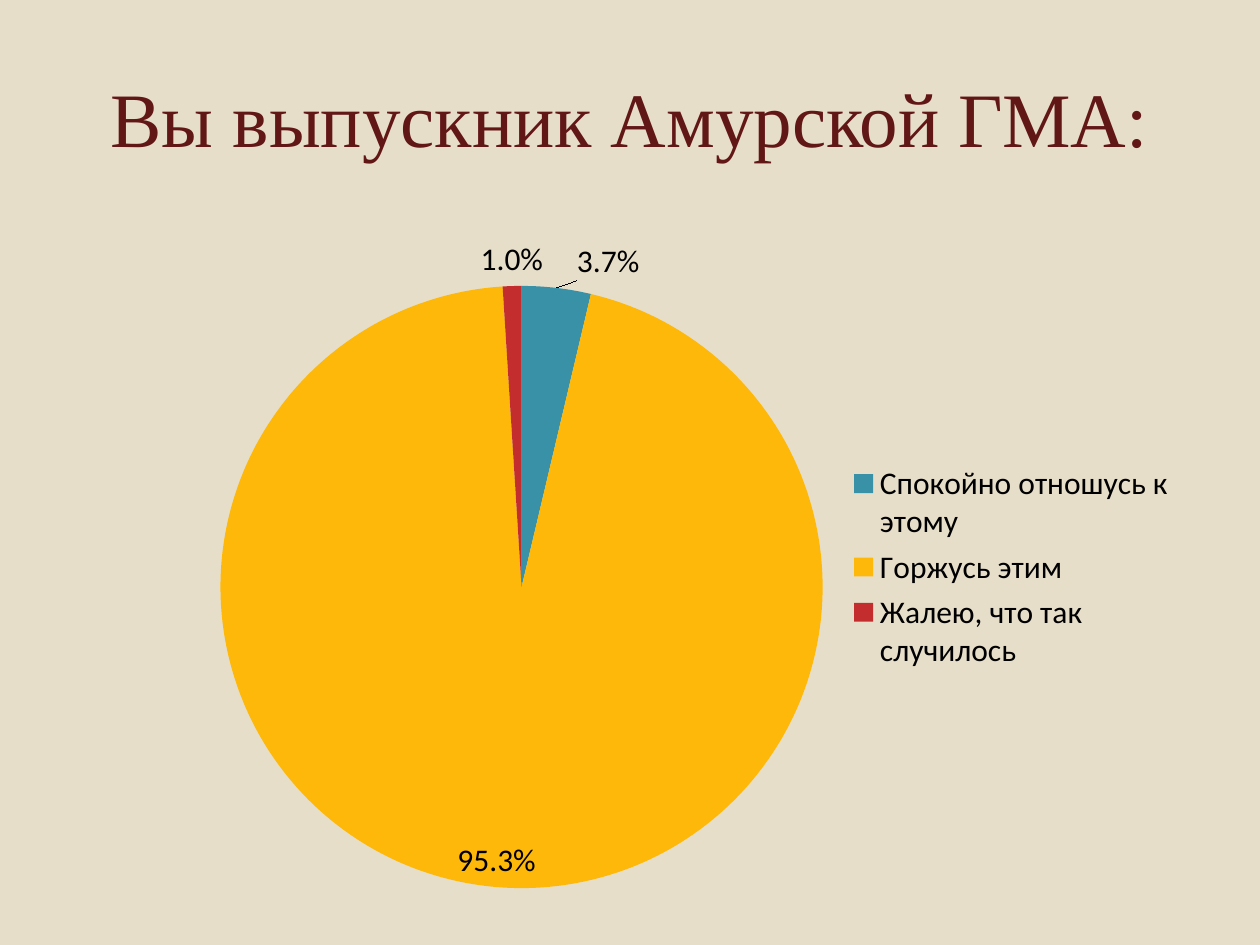
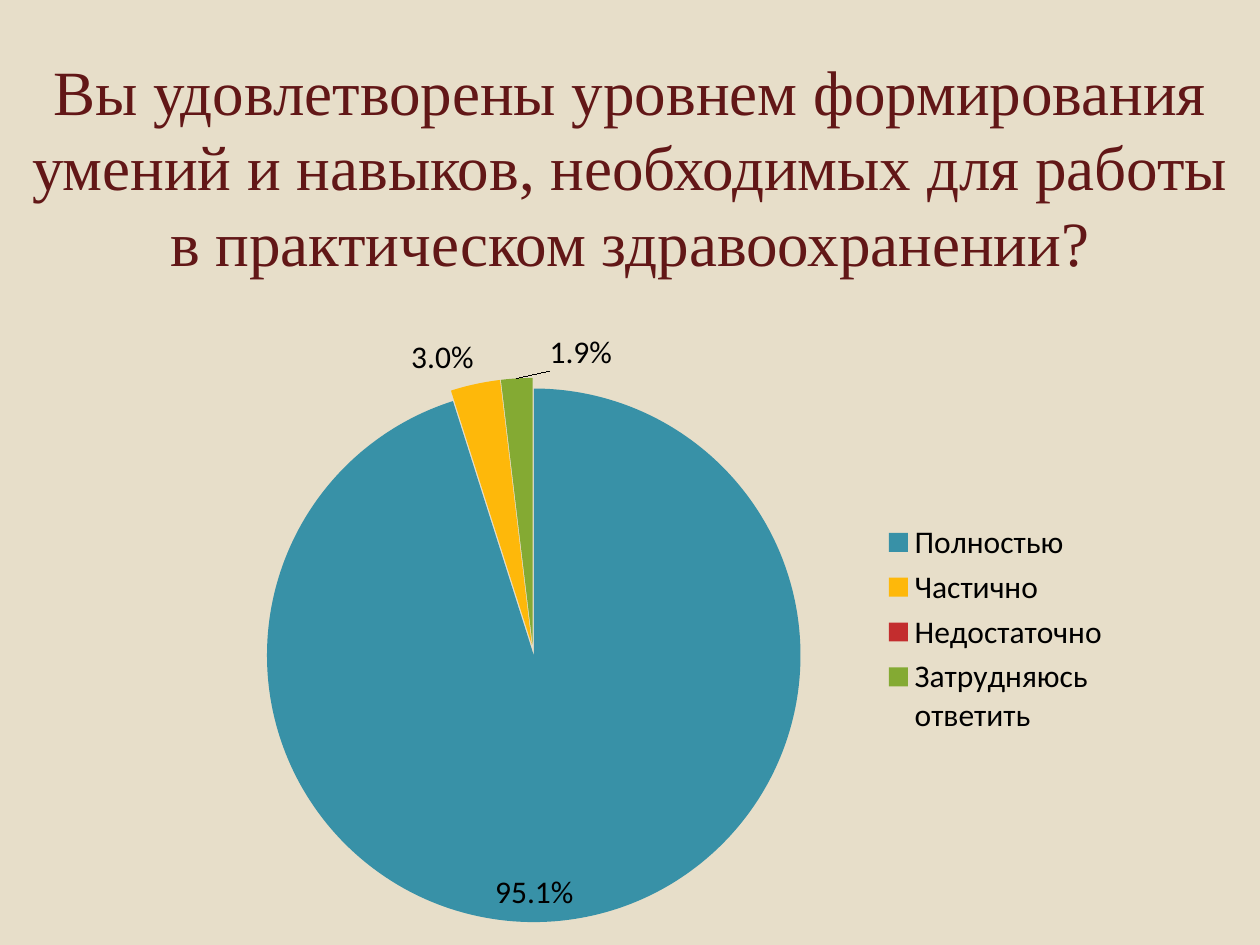
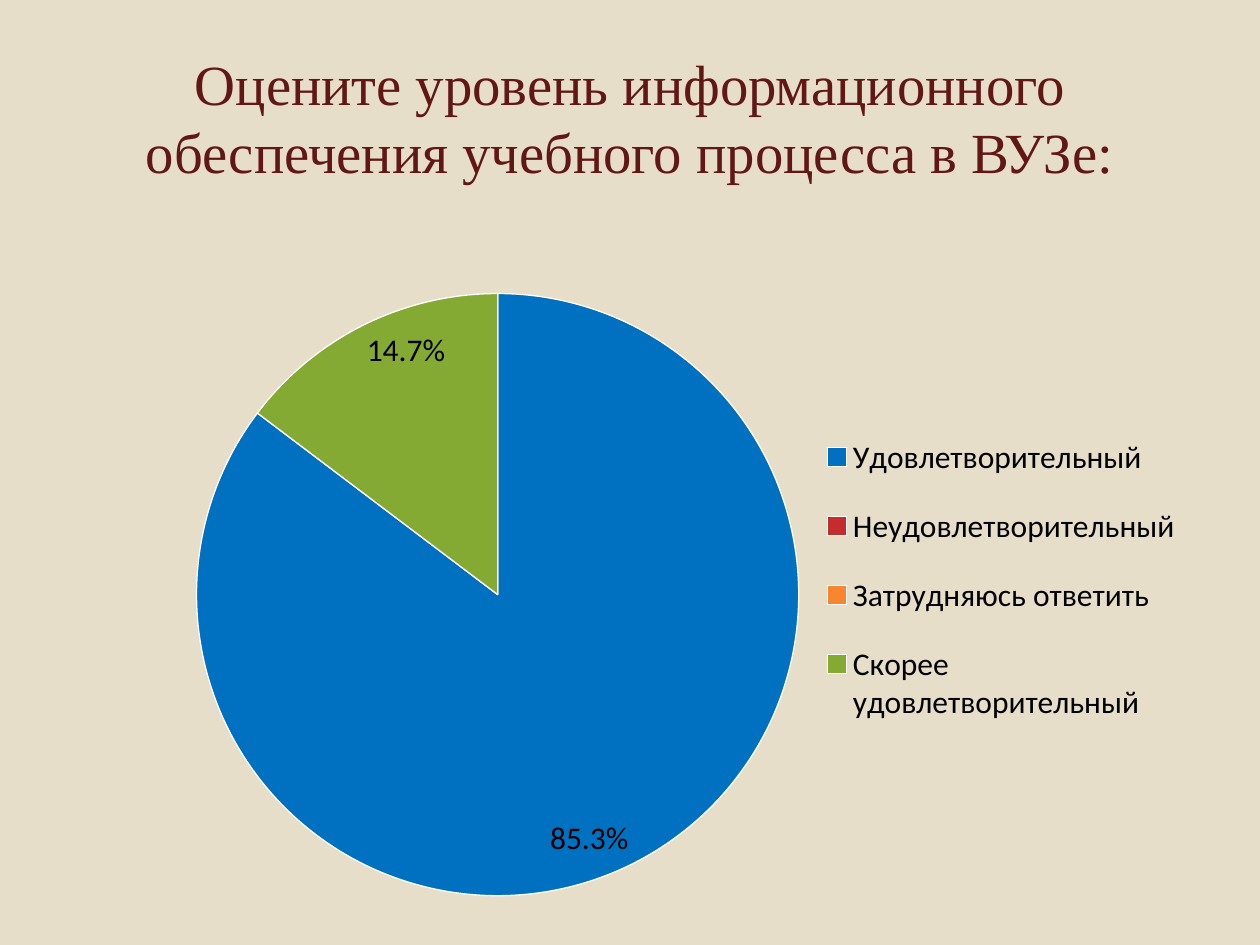
from dataclasses import dataclass

from pptx import Presentation
from pptx.chart.data import CategoryChartData
from pptx.dml.color import RGBColor
from pptx.enum.chart import XL_CHART_TYPE, XL_LEGEND_POSITION
from pptx.enum.text import MSO_ANCHOR, PP_ALIGN
from pptx.oxml import parse_xml
from pptx.oxml.ns import nsdecls, qn
from pptx.util import Inches, Pt


@dataclass(frozen=True)
class Theme:
    background: str = "E7DEC9"
    title: str = "621717"
    text: str = "000000"
    outline: str = "FFFFFF"
    teal: str = "3891A7"
    amber: str = "FEB80A"
    red: str = "C32D2E"
    green: str = "84AA33"
    blue: str = "0070C0"
    orange: str = "F88631"
    title_font: str = "Times New Roman"
    chart_font: str = "Calibri"
    chart_size: float = 18
    large_title: float = 44
    medium_title: float = 36
    small_title: float = 32.4
    percent_format: str = "0.0%"
    smallest_inside: float = 10


THEME = Theme()


@dataclass
class Answer:
    text: str
    percent: float
    color: str
    label_shift: float = 0


@dataclass
class Survey:
    """One question; frames are left, top, width, height in inches."""
    question: str
    title_size: float
    title_frame: tuple
    chart_frame: tuple
    pie_frame: tuple
    legend_frame: tuple
    answers: list
    explosion: int = 0
    outlined: bool = False


SURVEYS = [
    Survey(
        "Вы выпускник Амурской ГМА:",
        THEME.large_title, (0.5, 0.3, 9, 1.25), (1.61, 1.47, 7.8, 6.03),
        (1.75, 2.27, 4.78, 4.78), (6.7, 3.63, 2.65, 1.74),
        [Answer("Спокойно отношусь к этому", 3.7, THEME.teal, 0.02),
         Answer("Горжусь этим", 95.3, THEME.amber),
         Answer("Жалею, что так случилось", 1, THEME.red)]),
    Survey(
        "Вы удовлетворены уровнем формирования умений и навыков, "
        "необходимых для работы в практическом здравоохранении?",
        THEME.medium_title, (0, 0.3, 10, 2.03), (1.54, 2.51, 7.32, 4.96),
        (2.07, 3, 4.32, 4.32), (6.95, 4.1, 1.9, 1.78),
        [Answer("Полностью", 95.1, THEME.teal),
         Answer("Частично", 3, THEME.amber),
         Answer("Недостаточно", 0, THEME.red),
         Answer("Затрудняюсь ответить", 1.9, THEME.green, 0.07)],
        explosion=2),
    Survey(
        "Оцените уровень информационного обеспечения "
        "учебного процесса в ВУЗе:",
        THEME.small_title, (0.5, 0.3, 9, 1.25), (1.38, 1.7, 8.11, 5.8),
        (1.56, 2.33, 4.78, 4.78), (6.47, 3.23, 2.95, 2.74),
        [Answer("Удовлетворительный", 85.3, THEME.blue),
         Answer("Неудовлетворительный", 0, THEME.red),
         Answer("Затрудняюсь ответить", 0, THEME.orange),
         Answer("Скорее удовлетворительный", 14.7, THEME.green)],
        outlined=True),
]


def rgb(color):
    return RGBColor.from_string(color)


def style_font(font, name, size, color):
    font.name = name
    font.size = Pt(size)
    font.color.rgb = rgb(color)


def add_page(deck):
    page = deck.slides.add_slide(deck.slide_layouts[6])
    fill = page.background.fill
    fill.solid()
    fill.fore_color.rgb = rgb(THEME.background)
    return page


def add_title(page, survey):
    box = page.shapes.add_textbox(*map(Inches, survey.title_frame))
    frame = box.text_frame
    frame.word_wrap = True
    frame.vertical_anchor = MSO_ANCHOR.MIDDLE
    frame.text = survey.question
    para = frame.paragraphs[0]
    para.alignment = PP_ALIGN.CENTER
    style_font(para.runs[0].font, THEME.title_font, survey.title_size, THEME.title)


def place_part(part, index, frame, chart_frame, target=""):
    """Fix a chart part at a slide position, as fractions of the chart."""
    for old in part.findall(qn("c:layout")):
        part.remove(old)
    left, top, width, height = chart_frame
    fractions = {"x": (frame[0] - left) / width, "y": (frame[1] - top) / height,
                 "w": frame[2] / width, "h": frame[3] / height}
    modes = '<c:xMode val="edge"/><c:yMode val="edge"/>'
    values = "".join(f'<c:{key} val="{value:.4f}"/>' for key, value in fractions.items())
    part.insert(index, parse_xml(
        f'<c:layout {nsdecls("c")}><c:manualLayout>{target}{modes}{values}'
        '</c:manualLayout></c:layout>'))


def point_label(index, answer):
    """Large slices are labelled inside, small ones outside, empty ones not at all."""
    if not answer.percent:
        body = '<c:delete val="1"/>'
    else:
        position = "inEnd" if answer.percent > THEME.smallest_inside else "outEnd"
        layout = ""
        if answer.label_shift:
            layout = (f'<c:layout><c:manualLayout><c:x val="{answer.label_shift}"/>'
                      '<c:y val="0"/></c:manualLayout></c:layout>')
        shown = "".join(
            f'<c:show{name} val="{int(name == "Percent")}"/>'
            for name in ("LegendKey", "Val", "CatName", "SerName", "Percent", "BubbleSize"))
        body = (f'{layout}<c:numFmt formatCode="{THEME.percent_format}" sourceLinked="0"/>'
                f'<c:dLblPos val="{position}"/>{shown}')
    return parse_xml(f'<c:dLbl {nsdecls("c")}><c:idx val="{index}"/>{body}</c:dLbl>')


def label_slices(series, answers):
    labels = series.data_labels
    labels.number_format = THEME.percent_format
    labels.number_format_is_linked = False
    labels.show_value = False
    labels.show_percentage = True
    for index, answer in enumerate(answers):
        labels._element.insert(index, point_label(index, answer))


def color_slices(series, survey):
    for index, answer in enumerate(survey.answers):
        look = series.points[index].format
        look.fill.solid()
        look.fill.fore_color.rgb = rgb(answer.color)
        if survey.outlined:
            look.line.color.rgb = rgb(THEME.outline)
            look.line.width = Pt(0.75)
        else:
            look.line.fill.background()


def explode(series, percent):
    series._element.find(qn("c:tx")).addnext(
        parse_xml(f'<c:explosion {nsdecls("c")} val="{percent}"/>'))


def add_legend(chart, survey):
    chart.has_legend = True
    chart.legend.position = XL_LEGEND_POSITION.RIGHT
    chart.legend.include_in_layout = False
    place_part(chart.legend._element, 1, survey.legend_frame, survey.chart_frame)


def add_pie(page, survey):
    data = CategoryChartData()
    data.categories = [answer.text for answer in survey.answers]
    data.add_series("Series 1", [answer.percent for answer in survey.answers])
    chart = page.shapes.add_chart(
        XL_CHART_TYPE.PIE, *map(Inches, survey.chart_frame), data).chart
    chart.has_title = False
    style_font(chart.font, THEME.chart_font, THEME.chart_size, THEME.text)
    plot = chart.plots[0]
    plot.vary_by_categories = True
    series = plot.series[0]
    if survey.explosion:
        explode(series, survey.explosion)
    color_slices(series, survey)
    label_slices(series, survey.answers)
    add_legend(chart, survey)
    plot_area = chart._chartSpace.find(".//" + qn("c:plotArea"))
    place_part(plot_area, 0, survey.pie_frame, survey.chart_frame,
               '<c:layoutTarget val="inner"/>')


def main():
    deck = Presentation()
    deck.slide_width = Inches(10)
    deck.slide_height = Inches(7.5)
    for survey in SURVEYS:
        page = add_page(deck)
        add_title(page, survey)
        add_pie(page, survey)
    deck.save("out.pptx")


if __name__ == "__main__":
    main()
